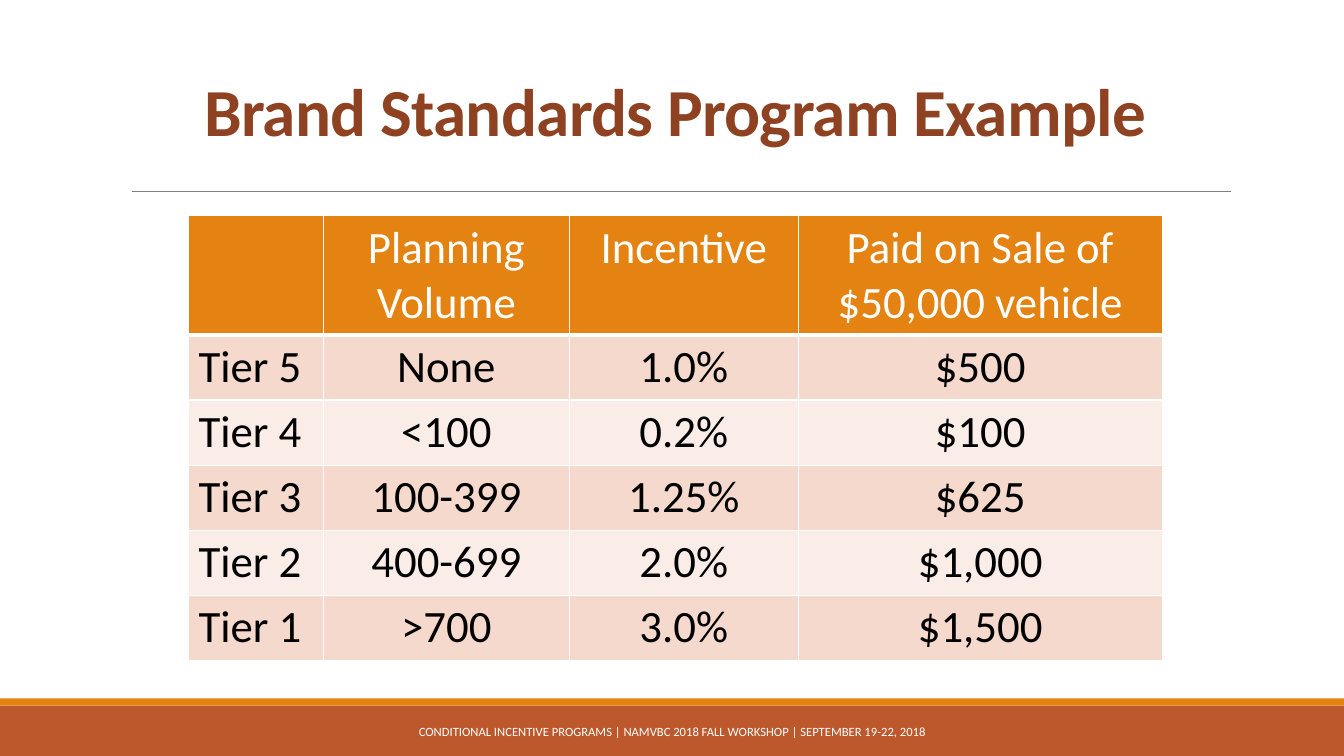
from lxml import etree
from pptx import Presentation
from pptx import util as u
from pptx.dml.color import RGBColor
from pptx.enum import shapes, text
from pptx.oxml import ns

ORANGE, RUST, BROWN, WHITE, BLACK = "E48312", "BD582C", "8E4221", "FFFFFF", "000000"
BANDS = ("F5D9CC", "FAEDE7")
COLUMN_WIDTHS = (3.4, 6.2, 5.77, 9.17)
HEADER_HEIGHT, TIER_HEIGHT = 3, 1.64
ROWS = (
    ("", "Planning\nVolume", "Incentive", "Paid on Sale of $50,000 vehicle"),
    ("Tier 5", "None", "1.0%", "$500"),
    ("Tier 4", "<100", "0.2%", "$100"),
    ("Tier 3", "100-399", "1.25%", "$625"),
    ("Tier 2", "400-699", "2.0%", "$1,000"),
    ("Tier 1", ">700", "3.0%", "$1,500"),
)


def color(value):
    return RGBColor.from_string(value)


def lengths(*values):
    return [u.Cm(value) for value in values]


class SlideBuilder:
    font_name = "Calibri"

    def __init__(self, page):
        self.page = page

    def set_text(self, frame, content, ink, size, align, spacing=None, tracking=None, **formats):
        """Fill a text frame, one paragraph for each line of content."""
        frame.text = content
        formats = {"name": self.font_name, "size": u.Pt(size), **formats}
        for para in frame.paragraphs:
            para.alignment = align
            para.line_spacing = spacing
            for target in (para, *para.runs):
                for name, value in formats.items():
                    setattr(target.font, name, value)
                target.font.color.rgb = color(ink)
            if tracking:
                for span in para.runs:
                    span.font._element.set("spc", str(tracking))

    def bar(self, *place, fill):
        box = self.page.shapes.add_shape(shapes.MSO_SHAPE.RECTANGLE, *lengths(*place))
        box.shadow.inherit = False
        box.fill.solid()
        box.fill.fore_color.rgb = color(fill)
        box.line.fill.background()

    def rule(self, *ends, ink, width):
        line = self.page.shapes.add_connector(shapes.MSO_CONNECTOR.STRAIGHT, *lengths(*ends))
        line.line.color.rgb = color(ink)
        line.line.width = u.Pt(width)
        etree.SubElement(line._element.spPr, ns.qn("a:effectLst"))

    def label(self, *place, content, anchor, **style):
        frame = self.page.shapes.add_textbox(*lengths(*place)).text_frame
        frame.word_wrap = True
        frame.vertical_anchor = anchor
        self.set_text(frame, content, align=text.PP_ALIGN.CENTER, **style)

    def border(self, cell, bottom):
        properties = cell._tc.get_or_add_tcPr()
        for side, width in {"L": 1, "R": 1, "T": 1, "B": bottom}.items():
            edge = etree.SubElement(properties, ns.qn(f"a:ln{side}"), w=str(u.Pt(width)))
            paint = etree.SubElement(edge, ns.qn("a:solidFill"))
            etree.SubElement(paint, ns.qn("a:srgbClr"), val=WHITE)

    def table(self, left, top, rows, widths, heights):
        place = lengths(left, top, sum(widths), sum(heights))
        grid = self.page.shapes.add_table(len(rows), len(widths), *place).table
        for column, width in zip(grid.columns, widths):
            column.width = u.Cm(width)
        for row, height in zip(grid.rows, heights):
            row.height = u.Cm(height)
        for i, values in enumerate(rows):
            header = i == 0
            for j, value in enumerate(values):
                cell = grid.cell(i, j)
                self.border(cell, bottom=3 if header else 1)
                cell.fill.solid()
                cell.fill.fore_color.rgb = color(ORANGE if header else BANDS[(i - 1) % 2])
                align = text.PP_ALIGN.CENTER if j else text.PP_ALIGN.LEFT
                ink = WHITE if header else BLACK
                self.set_text(cell.text_frame, value, ink, 32, align, bold=False)


def main():
    deck = Presentation()
    deck.slide_width, deck.slide_height = lengths(33.87, 19.05)
    page = SlideBuilder(deck.slides.add_slide(deck.slide_layouts[6]))
    page.bar(0, 17.78, 33.87, 1.27, fill=RUST)
    page.bar(0, 17.6, 33.87, 0.18, fill=ORANGE)
    page.rule(3.33, 4.83, 31.01, 4.83, ink="808080", width=0.5)
    page.label(3.05, 0.79, 27.94, 3.12, content="Brand Standards Program Example",
               anchor=text.MSO_ANCHOR.BOTTOM, ink=BROWN, size=48, spacing=0.85,
               tracking=-50, bold=True)
    heights = [HEADER_HEIGHT] + [TIER_HEIGHT] * (len(ROWS) - 1)
    page.table(4.75, 5.44, ROWS, COLUMN_WIDTHS, heights)
    page.label(10.24, 17.93, 13.39, 1.02,
               content="CONDITIONAL INCENTIVE PROGRAMS | NAMVBC 2018 FALL WORKSHOP | SEPTEMBER 19-22, 2018",
               anchor=text.MSO_ANCHOR.MIDDLE, ink=WHITE, size=9)
    deck.save("out.pptx")


if __name__ == "__main__":
    main()
